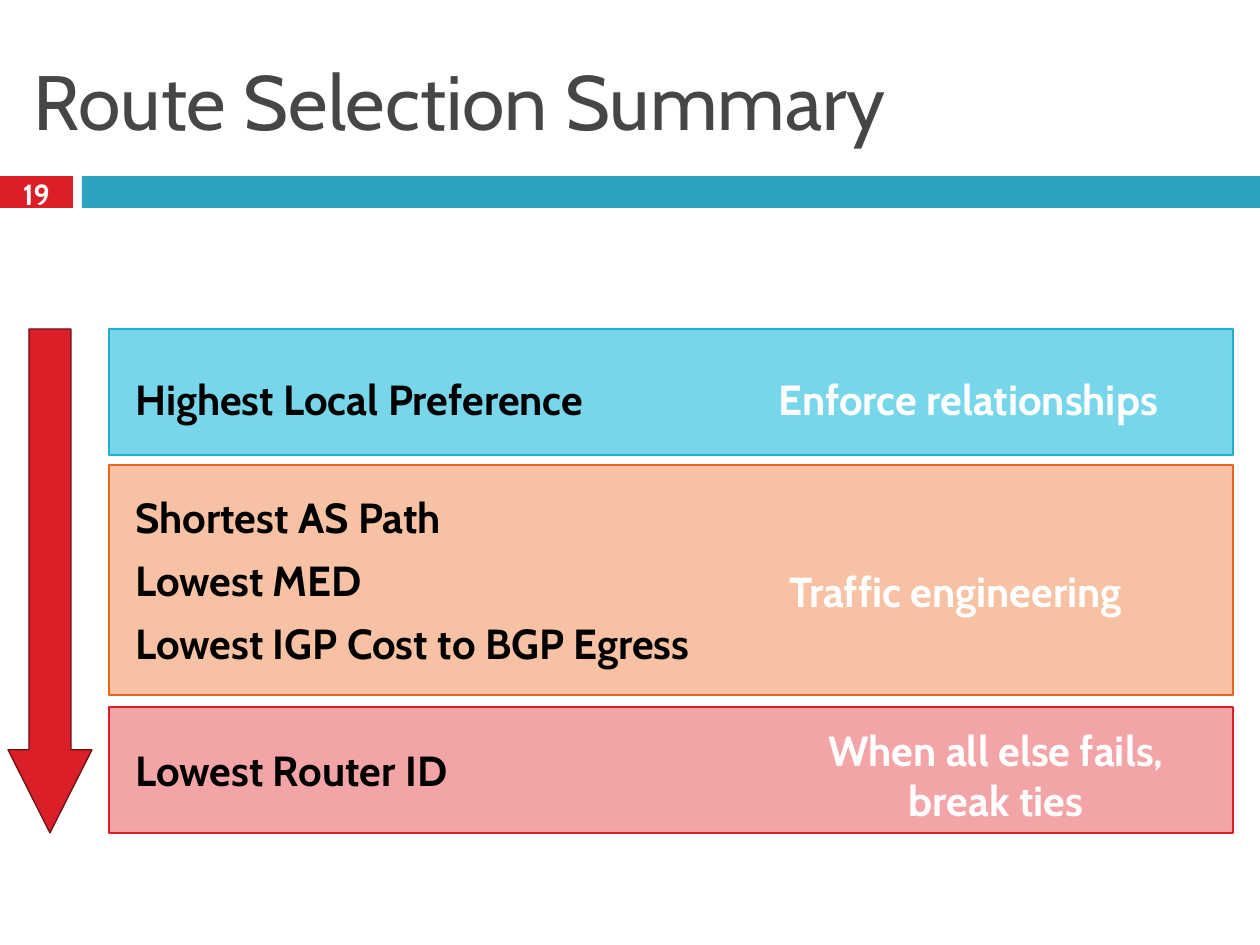
"""Build the route selection summary slide."""
from pptx import Presentation
from pptx.dml.color import RGBColor
from pptx.enum.shapes import MSO_SHAPE
from pptx.enum.text import MSO_ANCHOR, PP_ALIGN
from pptx.util import Emu, Pt

RECT, DOWN_ARROW = MSO_SHAPE.RECTANGLE, MSO_SHAPE.DOWN_ARROW
LEFT, CENTER = PP_ALIGN.LEFT, PP_ALIGN.CENTER
TOP, MIDDLE = MSO_ANCHOR.TOP, MSO_ANCHOR.MIDDLE

FONT = "Cabin"
COLORS = {
    "title": "464646", "black": "000000", "white": "FFFFFF",
    "red": "DA1F28", "dark red": "6D1014", "teal": "2DA2BF",
    "sky": "78D6EA", "sky edge": "1FAECD",
    "peach": "F7C1A4", "peach edge": "EB641B", "pink": "F2A4A7",
}

TITLE = "Route Selection Summary"
PAGE_NUMBER = "19"
BANDS = [
    {"top": 329, "height": 126, "fill": "sky", "edge": "sky edge",
     "criteria": ["Highest Local Preference"], "criteria_top": 367,
     "reason": ["Enforce relationships"], "reason_box": (766, 367, 459, 63), "align": LEFT},
    {"top": 465, "height": 230, "fill": "peach", "edge": "peach edge",
     "criteria": ["Shortest AS Path", "Lowest MED", "Lowest IGP Cost to BGP Egress"],
     "criteria_top": 485,
     "reason": ["Traffic engineering"], "reason_box": (777, 559, 416, 63), "align": LEFT},
    {"top": 707, "height": 126, "fill": "pink", "edge": "red",
     "criteria": ["Lowest Router ID"], "criteria_top": 738,
     "reason": ["When all else fails,", "break ties"],
     "reason_box": (795, 718, 402, 115), "align": CENTER},
]
BAND_LEFT, BAND_WIDTH = 109, 1124
CRITERIA_LEFT, CRITERIA_WIDTH, ROW_HEIGHT = 123, 682, 63


def px(length):
    return Emu(round(length * 914400 / 126))


def color(name):
    return RGBColor.from_string(COLORS[name])


def write(frame, lines, size=24, ink="black", bold=True, align=LEFT, anchor=TOP):
    frame.word_wrap = True
    frame.vertical_anchor = anchor
    for index, line in enumerate(lines):
        paragraph = frame.add_paragraph() if index else frame.paragraphs[0]
        paragraph.alignment = align
        run = paragraph.add_run()
        run.text = line
        run.font.name, run.font.size, run.font.bold = FONT, Pt(size), bold
        run.font.color.rgb = color(ink)


def add_label(slide, box, lines, **style):
    label = slide.shapes.add_textbox(*map(px, box))
    write(label.text_frame, lines, **style)


def add_block(slide, preset, box, fill, edge=None):
    block = slide.shapes.add_shape(preset, *map(px, box))
    block.shadow.inherit = False
    block.fill.solid()
    block.fill.fore_color.rgb = color(fill)
    if edge:
        block.line.color.rgb = color(edge)
        block.line.width = Pt(0.75)
    else:
        block.line.fill.background()
    return block


def main():
    deck = Presentation()
    deck.slide_width, deck.slide_height = px(1260), px(945)
    slide = deck.slides.add_slide(deck.slide_layouts[5])

    title = slide.shapes.title
    title.left, title.top, title.width, title.height = map(px, (21, 32, 1218, 136))
    write(title.text_frame, [TITLE], size=44, ink="title", bold=False, anchor=MIDDLE)

    add_block(slide, RECT, (0, 176, 73, 32), "red")
    add_block(slide, RECT, (82, 176, 1178, 32), "teal")
    add_label(slide, (0, 173, 73, 42), [PAGE_NUMBER], size=16.6, ink="white",
              align=CENTER, anchor=MIDDLE)

    for band in BANDS:
        add_block(slide, RECT, (BAND_LEFT, band["top"], BAND_WIDTH, band["height"]),
                  band["fill"], band["edge"])
        for row, criterion in enumerate(band["criteria"]):
            row_top = band["criteria_top"] + row * ROW_HEIGHT
            add_label(slide, (CRITERIA_LEFT, row_top, CRITERIA_WIDTH, ROW_HEIGHT), [criterion])
        add_label(slide, band["reason_box"], band["reason"], ink="white", align=band["align"])

    first, last = BANDS[0], BANDS[-1]
    arrow_height = last["top"] + last["height"] - first["top"]
    priority_arrow = add_block(slide, DOWN_ARROW, (8, first["top"], 84, arrow_height),
                               "red", "dark red")
    priority_arrow.adjustments[1] = 0.99

    deck.save("out.pptx")


if __name__ == "__main__":
    main()
